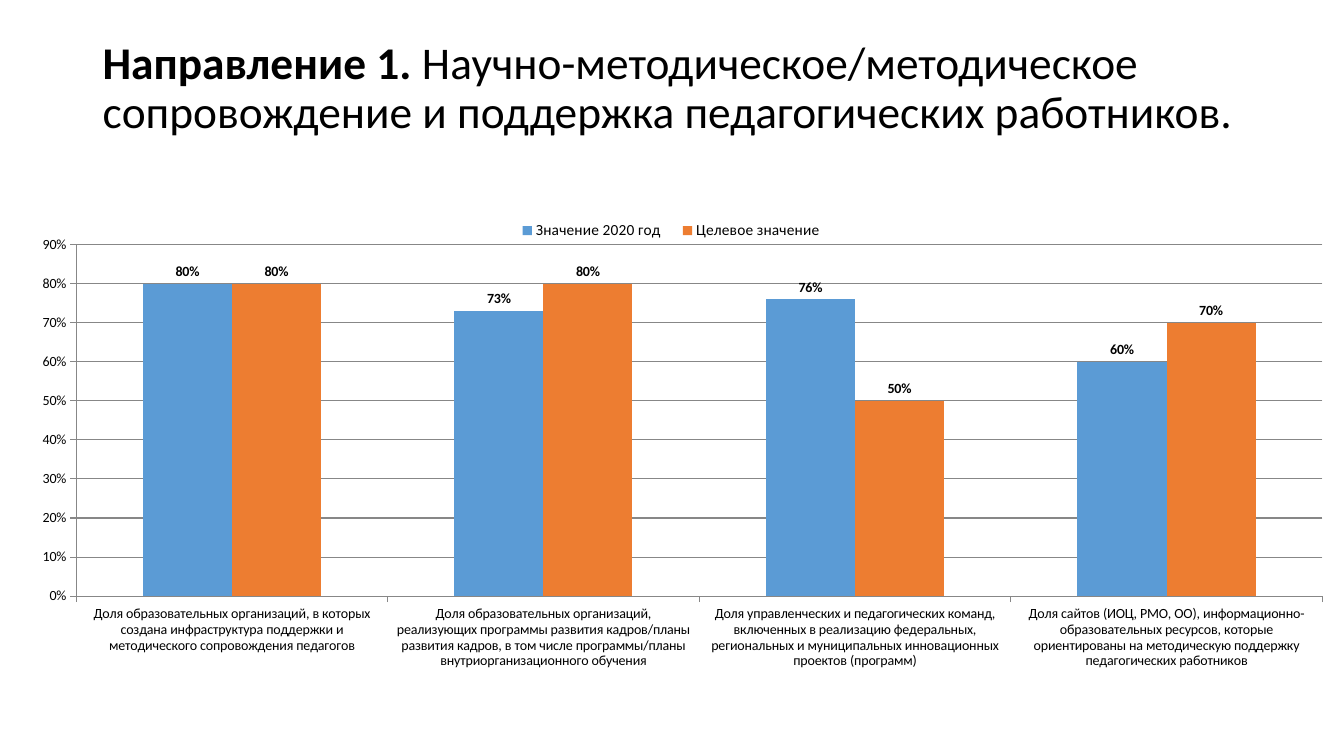
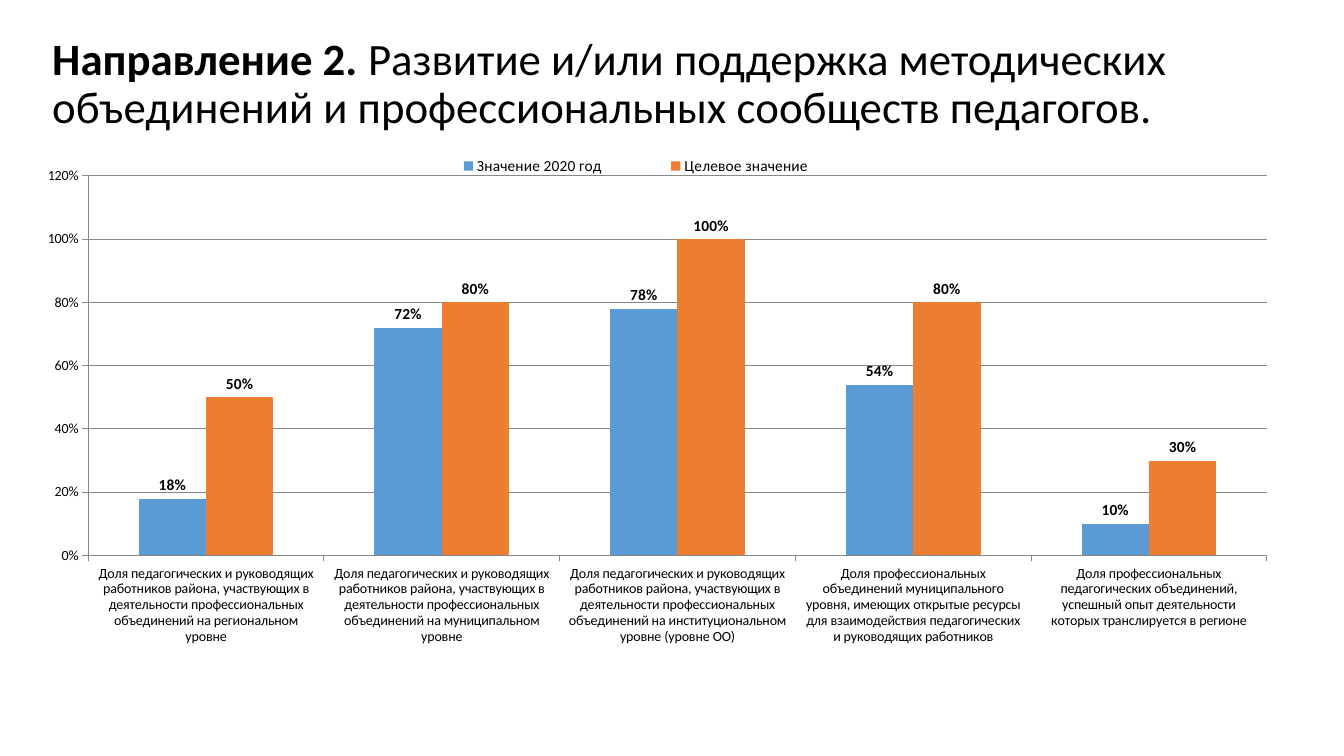
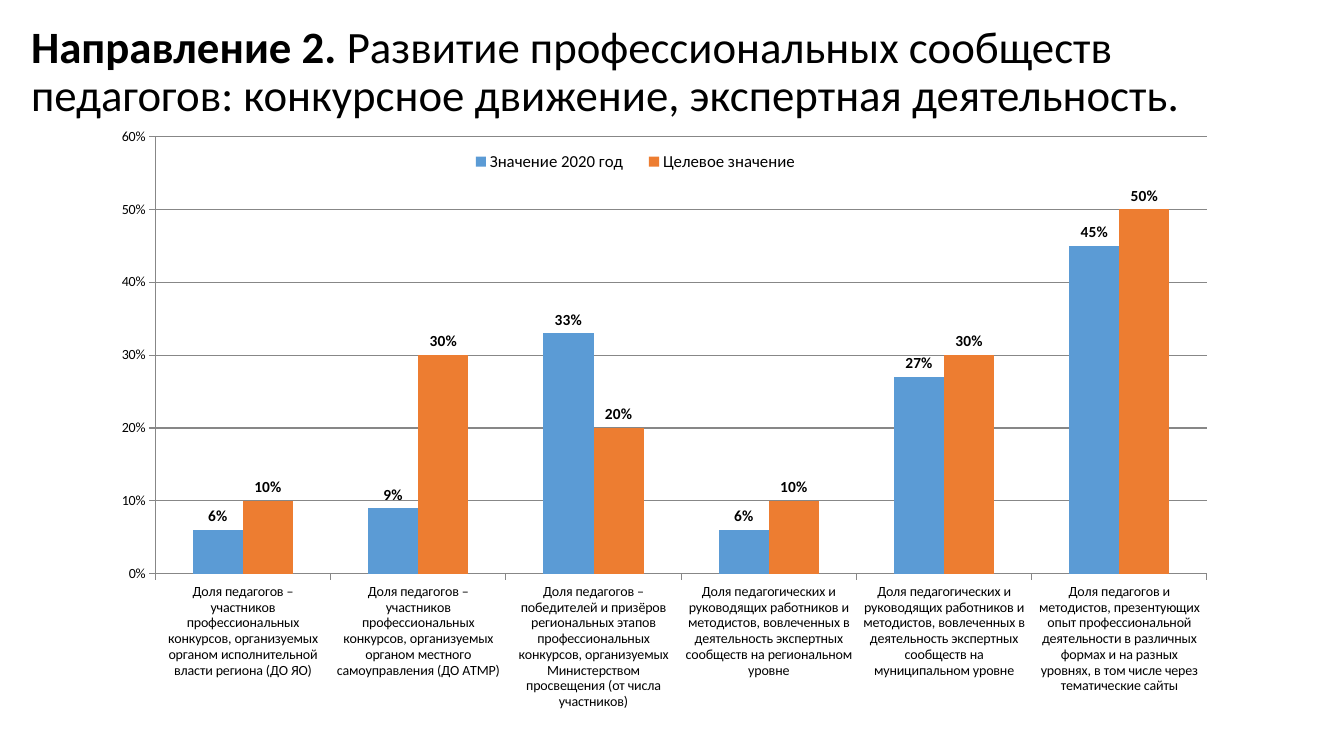
"""Three slides comparing 2020 indicators with their targets in column charts."""
from lxml import etree
from pptx import Presentation
from pptx.chart.data import CategoryChartData
from pptx.dml.color import RGBColor
from pptx.enum.chart import XL_CHART_TYPE as ChartType
from pptx.enum.chart import XL_LABEL_POSITION as LabelPos
from pptx.enum.chart import XL_LEGEND_POSITION as LegendPos
from pptx.enum.chart import XL_TICK_MARK as Tick
from pptx.enum.text import MSO_ANCHOR
from pptx.oxml.ns import qn
from pptx.util import Inches, Pt

FONT = "Calibri"
COLORS = {"text": "000000", "grid": "878787", "actual": "5B9BD5", "target": "ED7D31"}
SERIES = [("Значение 2020 год", "actual"), ("Целевое значение", "target")]
STAFF = "Доля педагогических и руководящих работников района, участвующих в деятельности профессиональных объединений на "
CONTEST = "Доля педагогов – участников профессиональных конкурсов, организуемых органом "
EXPERT = "Доля педагогических и руководящих работников и методистов, вовлеченных в деятельность экспертных сообществ на "

SLIDES = [
    {
        "heading": "Направление 1. ",
        "topic": "Научно-методическое/методическое сопровождение и поддержка педагогических работников.",
        "title_size": 32.4, "title_box": (0.92, 0.28, 11.5, 1.22),
        "chart_box": (0.2, -0.4, 12.92, 8.31),
        "plot": (0.043, 0.34, 0.957, 0.42), "legend": (0.373, 0.306, 0.254, 0.035),
        "legend_size": 11, "label_size": 10, "top": 0.9, "step": 0.1,
        "rows": [
            ("Доля образовательных организаций, в которых создана инфраструктура поддержки и методического сопровождения педагогов", 0.8, 0.8),
            ("Доля образовательных организаций, реализующих программы развития кадров/планы развития кадров, в том числе программы/планы внутриорганизационного обучения", 0.73, 0.8),
            ("Доля управленческих и педагогических команд, включенных в реализацию федеральных, региональных и муниципальных инновационных проектов (программ)", 0.76, 0.5),
            ("Доля сайтов (ИОЦ, РМО, ОО), информационно-образовательных ресурсов, которые ориентированы на методическую поддержку педагогических работников", 0.6, 0.7),
        ],
    },
    {
        "heading": "Направление 2. ",
        "topic": "Развитие и/или поддержка методических объединений и профессиональных сообществ педагогов.",
        "title_size": 32, "title_box": (0.42, 0.12, 12.64, 1.45),
        "chart_box": (0.26, 0.97, 12.31, 6.63),
        "plot": (0.05, 0.117, 0.95, 0.568), "legend": (0.301, 0.08, 0.381, 0.044),
        "legend_size": 11, "label_size": 11, "top": 1.2, "step": 0.2,
        "rows": [
            (STAFF + "региональном уровне", 0.18, 0.5),
            (STAFF + "муниципальном уровне", 0.72, 0.8),
            (STAFF + "институциональном уровне (уровне ОО)", 0.78, 1),
            ("Доля профессиональных объединений муниципального уровня, имеющих открытые ресурсы для взаимодействия педагогических и руководящих работников", 0.54, 0.8),
            ("Доля профессиональных педагогических объединений, успешный опыт деятельности которых транслируется в регионе", 0.1, 0.3),
        ],
    },
    {
        "heading": "Направление 2. ",
        "topic": "Развитие профессиональных сообществ педагогов: конкурсное движение, экспертная деятельность.",
        "title_size": 32, "title_box": (0.21, 0, 12.91, 1.45),
        "chart_box": (0.92, 1.07, 11.5, 6.76),
        "plot": (0.054, 0.042, 0.907, 0.642), "legend": (0.313, 0.056, 0.31, 0.046),
        "legend_size": 12, "label_size": 11, "top": 0.6, "step": 0.1,
        "rows": [
            (CONTEST + "исполнительной власти региона (ДО ЯО)", 0.06, 0.1),
            (CONTEST + "местного самоуправления (ДО АТМР)", 0.09, 0.3),
            ("Доля педагогов – победителей и призёров региональных этапов профессиональных конкурсов, организуемых Министерством просвещения (от числа участников)", 0.33, 0.2),
            (EXPERT + "региональном уровне", 0.06, 0.1),
            (EXPERT + "муниципальном уровне", 0.27, 0.3),
            ("Доля педагогов и методистов, презентующих опыт профессиональной деятельности в различных формах и на разных уровнях, в том числе через тематические сайты", 0.45, 0.5),
        ],
    },
]


def style_font(font, size, bold=False):
    font.name = FONT
    font.size = Pt(size)
    font.bold = bold
    font.color.rgb = RGBColor.from_string(COLORS["text"])


def place(parent, index, box, inner=False):
    for old in parent.findall(qn("c:layout")):
        parent.remove(old)
    layout = etree.Element(qn("c:layout"))
    manual = etree.SubElement(layout, qn("c:manualLayout"))
    settings = [("layoutTarget", "inner")] if inner else []
    settings += [("xMode", "edge"), ("yMode", "edge"), *zip("xywh", box)]
    for tag, value in settings:
        etree.SubElement(manual, qn(f"c:{tag}")).set("val", str(value))
    parent.insert(index, layout)


prs = Presentation()
prs.slide_width, prs.slide_height = Inches(13.33), Inches(7.5)

for content in SLIDES:
    slide = prs.slides.add_slide(prs.slide_layouts[6])

    data = CategoryChartData(number_format="0%")
    names, *columns = zip(*content["rows"])
    data.categories = names
    for (name, _), values in zip(SERIES, columns):
        data.add_series(name, values)
    chart = slide.shapes.add_chart(
        ChartType.COLUMN_CLUSTERED, *map(Inches, content["chart_box"]), data
    ).chart
    chart.has_title = False
    style_font(chart.font, 10)

    bars = chart.plots[0]
    bars.gap_width, bars.overlap = 150, 0
    bars.vary_by_categories = False
    for series, (_, color) in zip(bars.series, SERIES):
        series.format.fill.solid()
        series.format.fill.fore_color.rgb = RGBColor.from_string(COLORS[color])
        labels = series.data_labels
        labels.show_value = True
        labels.number_format, labels.number_format_is_linked = "0%", False
        labels.position = LabelPos.OUTSIDE_END
        style_font(labels.font, content["label_size"], bold=True)

    scale = chart.value_axis
    scale.minimum_scale, scale.maximum_scale = 0, content["top"]
    scale.major_unit = content["step"]
    scale.has_major_gridlines = True
    scale.tick_labels.number_format = "0%"
    scale.tick_labels.number_format_is_linked = False
    for axis in (scale, chart.category_axis):
        axis.major_tick_mark, axis.minor_tick_mark = Tick.OUTSIDE, Tick.NONE
        style_font(axis.tick_labels.font, 10)
    for part in (scale, chart.category_axis, scale.major_gridlines):
        part.format.line.color.rgb = RGBColor.from_string(COLORS["grid"])
        part.format.line.width = Pt(0.75)
    category_text = chart.element.find(f".//{qn('c:catAx')}/{qn('c:txPr')}/{qn('a:bodyPr')}")
    category_text.set("rot", "0")
    category_text.set("vert", "horz")

    chart.has_legend = True
    chart.legend.position = LegendPos.TOP
    chart.legend.include_in_layout = False
    style_font(chart.legend.font, content["legend_size"])
    place(chart.element.find(".//" + qn("c:plotArea")), 0, content["plot"], inner=True)
    place(chart.element.find(".//" + qn("c:legend")), 1, content["legend"])

    title = slide.shapes.add_textbox(*map(Inches, content["title_box"])).text_frame
    title.word_wrap = True
    title.vertical_anchor = MSO_ANCHOR.MIDDLE
    paragraph = title.paragraphs[0]
    paragraph.line_spacing = 0.9
    for text, bold in ((content["heading"], True), (content["topic"], False)):
        run = paragraph.add_run()
        run.text = text
        style_font(run.font, content["title_size"], bold)

prs.save("out.pptx")
